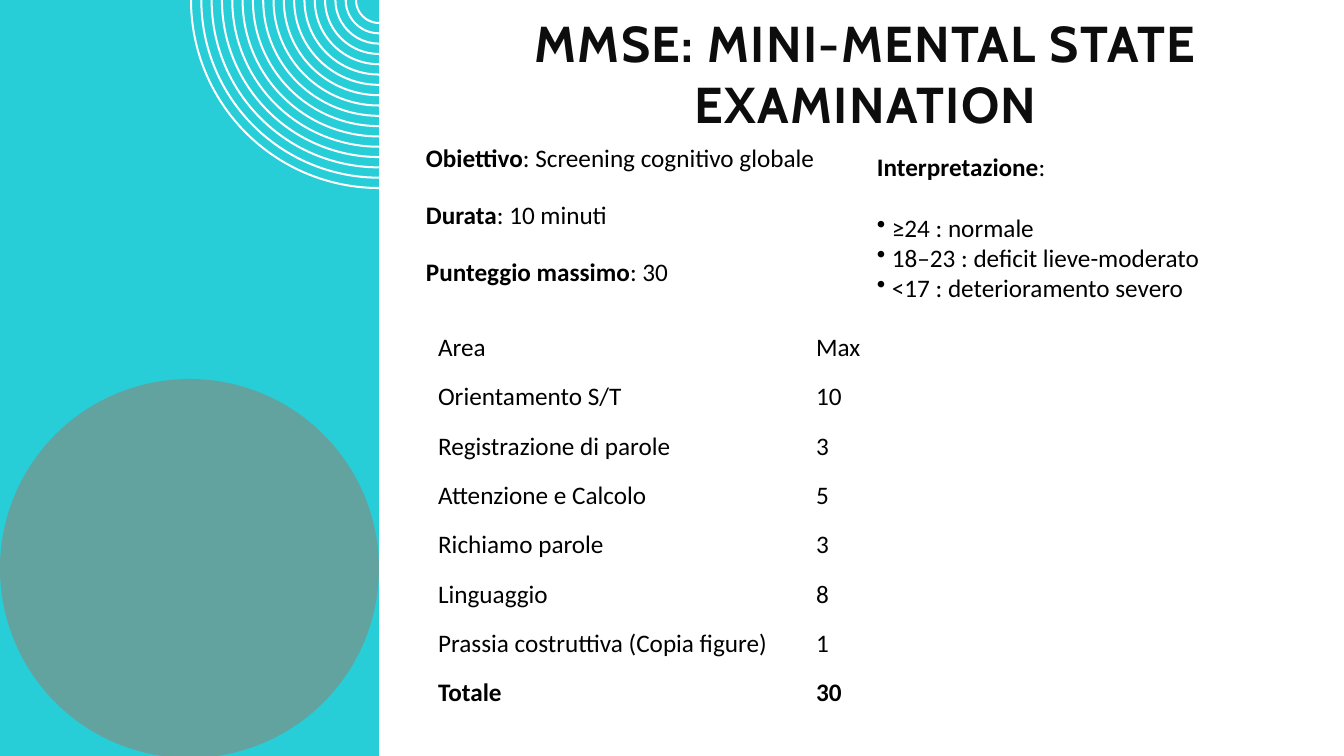
from pptx import Presentation
from pptx.dml.color import RGBColor
from pptx.enum.shapes import MSO_SHAPE
from pptx.enum.text import MSO_ANCHOR, MSO_AUTO_SIZE, PP_ALIGN
from pptx.oxml.ns import qn
from pptx.util import Pt

PX = 12192000 / 1344
QUARTER_TURN = 5400000
TURQUOISE = RGBColor(0x27, 0xCE, 0xD7)
SAGE = RGBColor(0x62, 0xA3, 0x9F)
WHITE = RGBColor(0xFF, 0xFF, 0xFF)
BLACK = RGBColor(0x00, 0x00, 0x00)
TITLE_INK = RGBColor(0x0D, 0x0D, 0x0D)

FACTS = [
    ("Obiettivo", ": Screening cognitivo globale"),
    ("Durata", ": 10 minuti"),
    ("Punteggio massimo", ": 30"),
]
RANGES = ["≥24 : normale", "18–23 : deficit lieve-moderato", "<17 : deterioramento severo"]
SCORES = [
    ("Area", "Max"),
    ("Orientamento S/T", "10"),
    ("Registrazione di parole", "3"),
    ("Attenzione e Calcolo", "5"),
    ("Richiamo parole", "3"),
    ("Linguaggio", "8"),
    ("Prassia costruttiva (Copia figure)", "1"),
    ("Totale", "30"),
]


def px(length):
    return round(length * PX)


def emu(*box):
    return [px(length) for length in box]


def paint(shape, color):
    shape.shadow.inherit = False
    shape.fill.solid()
    shape.fill.fore_color.rgb = color
    shape.line.fill.background()


def style(paragraph, size=18, name="Calibri", color=BLACK):
    paragraph.font.size = Pt(size)
    paragraph.font.name = name
    paragraph.font.color.rgb = color


def add_label(paragraph, label, rest):
    paragraph.add_run().text = label
    paragraph.runs[0].font.bold = True
    paragraph.add_run().text = rest
    style(paragraph)


def text_frame(slide, box, inset_y):
    frame = slide.shapes.add_textbox(*emu(*box)).text_frame
    frame.word_wrap = True
    frame.margin_top = frame.margin_bottom = px(inset_y)
    return frame


def bend(segment, radius, start, sweep):
    curve = segment.makeelement(qn("a:arcTo"), {
        "wR": str(px(radius)), "hR": str(px(radius)),
        "stAng": str(start), "swAng": str(sweep),
    })
    segment.getparent().replace(segment, curve)


def add_rings(slide, center_x, top, outer, inner, count=17, thickness=2):
    gap = (outer - inner) / (count - 1)
    radii = [outer - ring * gap for ring in range(count)]
    builder = slide.shapes.build_freeform(px(center_x - outer), px(top))
    for radius in radii:
        hollow = radius - thickness
        if radius != outer:
            builder.move_to(px(center_x - radius), px(top))
        builder.add_line_segments([
            emu(center_x, top + radius),
            emu(center_x, top + hollow),
            emu(center_x - hollow, top),
        ], close=True)
    rings = builder.convert_to_shape()
    segments = list(rings._element.iter(qn("a:lnTo")))
    for radius, outside, inside in zip(radii, segments[0::3], segments[2::3]):
        bend(outside, radius, 2 * QUARTER_TURN, -QUARTER_TURN)
        bend(inside, radius - thickness, QUARTER_TURN, QUARTER_TURN)
    paint(rings, WHITE)


def add_side_panel(slide, left, top, width, height):
    panel = slide.shapes.add_shape(MSO_SHAPE.RECTANGLE, *emu(left, top, width, height))
    paint(panel, TURQUOISE)
    add_rings(slide, left + width, top, outer=189, inner=24)
    disc = slide.shapes.add_shape(MSO_SHAPE.OVAL, *emu(left, top + width, width, width))
    paint(disc, SAGE)


def add_title(slide, left, top, width, height):
    title = slide.shapes.title
    title.left, title.top, title.width, title.height = emu(left, top, width, height)
    frame = title.text_frame
    frame.auto_size = MSO_AUTO_SIZE.NONE
    frame.word_wrap = True
    frame.vertical_anchor = MSO_ANCHOR.MIDDLE
    frame.margin_top = frame.margin_bottom = 0
    heading = frame.paragraphs[0]
    heading.text = "MMSE: MINI-MENTAL STATE EXAMINATION"
    heading.alignment = PP_ALIGN.CENTER
    style(heading, 36, "Cabin", TITLE_INK)
    heading.font.bold = True
    heading.runs[0].font._element.set("spc", "100")


def add_facts(slide, *box):
    frame = text_frame(slide, box, 0)
    for index, (label, rest) in enumerate(FACTS):
        fact = frame.add_paragraph() if index else frame.paragraphs[0]
        fact.line_spacing = 0.9
        fact.space_after = Pt(21)
        add_label(fact, label, rest)


def add_interpretation(slide, *box):
    frame = text_frame(slide, box, 5)
    add_label(frame.paragraphs[0], "Interpretazione", ":")
    frame.paragraphs[0].space_after = Pt(22)
    for score_range in RANGES:
        item = frame.add_paragraph()
        item.text = score_range
        properties = item._p.get_or_add_pPr()
        properties.set("marL", str(px(15)))
        properties.set("indent", str(-px(15)))
        bullet = properties.makeelement(qn("a:buChar"), {"char": "•"})
        properties.append(bullet)
        style(item)


def add_scores(slide, *box):
    table = slide.shapes.add_table(len(SCORES), 2, *emu(*box)).table
    table.first_row = table.horz_banding = False
    for row, values in enumerate(SCORES):
        for column, value in enumerate(values):
            cell = table.cell(row, column)
            cell.fill.background()
            cell.vertical_anchor = MSO_ANCHOR.MIDDLE
            cell.text = value
            entry = cell.text_frame.paragraphs[0]
            style(entry)
            entry.font.bold = row == len(SCORES) - 1


def main():
    deck = Presentation()
    deck.slide_width, deck.slide_height = emu(1344, 756)
    slide = deck.slides.add_slide(deck.slide_layouts[5])
    slide.background.fill.solid()
    slide.background.fill.fore_color.rgb = WHITE
    add_side_panel(slide, 0, 0, 379, 756)
    add_title(slide, 416, 27, 900, 92)
    add_facts(slide, 416, 146, 417, 149)
    add_scores(slide, 428, 323, 756, 395)
    add_interpretation(slide, 867, 146, 429, 163)
    deck.save("out.pptx")


if __name__ == "__main__":
    main()
